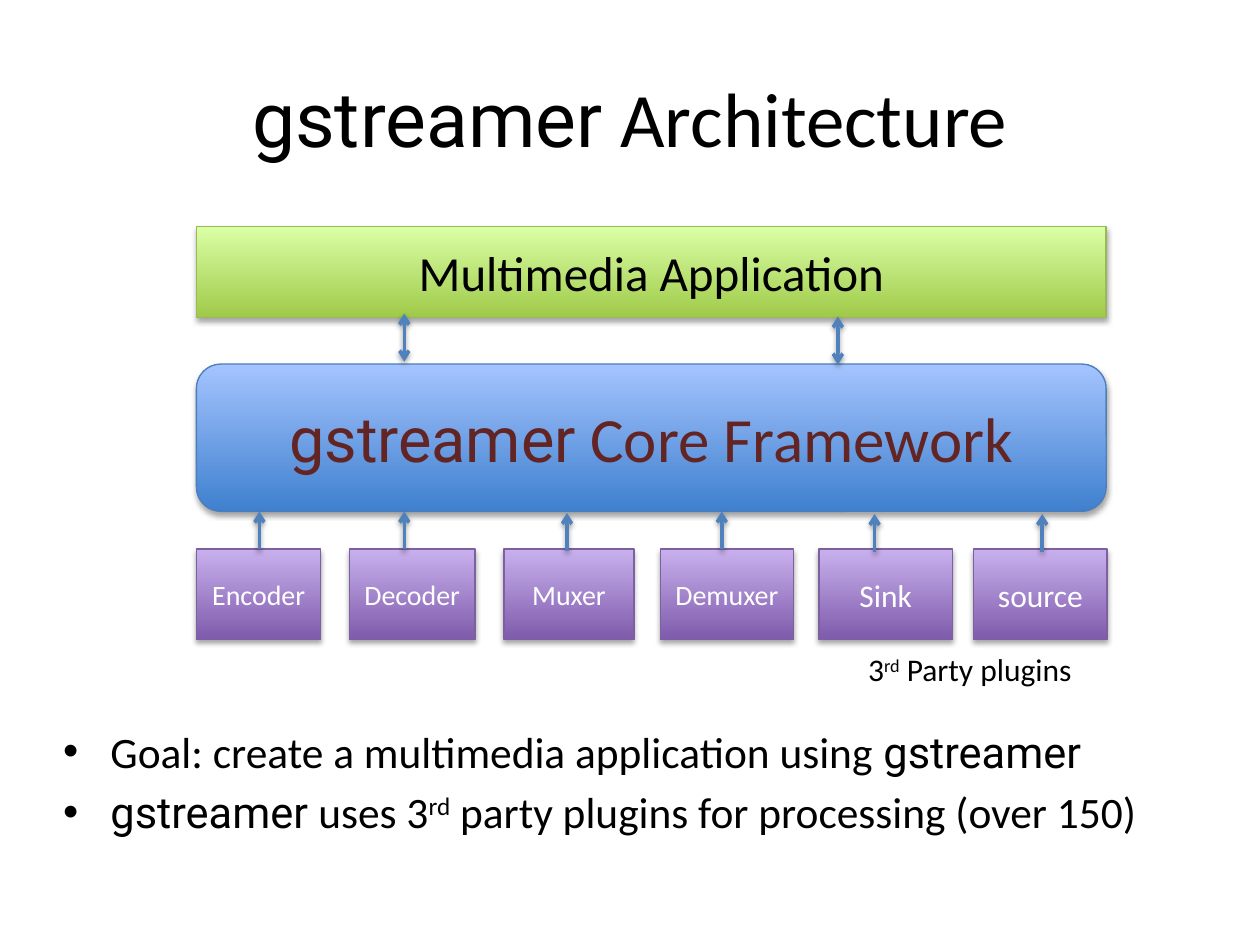
from lxml.etree import SubElement
from pptx import Presentation
from pptx.dml.color import RGBColor
from pptx.enum.shapes import MSO_CONNECTOR as Connector, MSO_SHAPE as Shape
from pptx.enum.text import MSO_ANCHOR as Anchor, MSO_AUTO_SIZE as AutoSize, PP_ALIGN as Align
from pptx.oxml.ns import qn
from pptx.util import Cm, Pt

COLORS = {
    "text": "000000", "framework_text": "632523", "plugin_text": "FFFFFF", "arrow": "4F81BD",
    "application": ("A0CA4A", "DAFFA5", "98B955"),
    "framework": ("3F80CE", "A4C4FF", "4B7EBC"),
    "plugin": ("7F5BAB", "C8B0ED", "7D60A0"),
}
LIBRARY = ("gstreamer", "library")
TITLE = [LIBRARY, (" Architecture", "")]
GOALS = [
    [("Goal: create a multimedia application using ", ""), LIBRARY],
    [LIBRARY, (" uses 3", ""), ("rd", "super"), (" party plugins for processing (over 150)", "")],
]
APPLICATION = [("Multimedia Application", "")]
FRAMEWORK = [LIBRARY, (" Core Framework", "")]
CAPTION = [("3", ""), ("rd", "super"), (" Party plugins", "")]
PLUGINS = [
    ("Encoder", 16, 3.96, 2.51, 5.23, 0),
    ("Decoder", 16, 7.04, 2.54, 8.15, 0),
    ("Muxer", 16, 10.16, 2.62, 11.43, 0.03),
    ("Demuxer", 16, 13.31, 2.69, 14.55, 0),
    ("Sink", 18, 16.51, 2.69, 17.63, 0.05),
    ("source", 18, 19.63, 2.69, 21.01, 0.05),
]
APPLICATION_LINKS = [(16.89, 6.38), (8.15, 6.32)]
STACK_LEFT, STACK_WIDTH = 3.96, 18.34
APPLICATION_TOP, FRAMEWORK_TOP, PLUGIN_TOP = 4.57, 7.34, 11.07
BAR_HEIGHT, FRAMEWORK_HEIGHT = 1.83, 2.97
LINK_HEIGHT, PLUGIN_LINK_HEIGHT = 0.97, 0.76


def write(paragraph, parts, size, color="text"):
    for words, style in parts:
        run = paragraph.add_run()
        run.text = words
        run.font.name = "Roboto" if style == "library" else "Calibri"
        if style == "super":
            run._r.get_or_add_rPr().set("baseline", "30000")
    paragraph.font.size = Pt(size)
    paragraph.font.color.rgb = RGBColor.from_string(COLORS[color])


def add_shadow(effects, distance, opacity):
    shadow = SubElement(effects, qn("a:outerShdw"), blurRad=str(Pt(3.1)), dist=str(Pt(distance)),
                        dir="5400000", rotWithShape="0")
    black = SubElement(shadow, qn("a:srgbClr"), val="000000")
    SubElement(black, qn("a:alpha"), val=str(opacity * 1000))


def add_block(slide, preset, place, palette, parts, size, color):
    block = slide.shapes.add_shape(preset, *map(Cm, place))
    bottom, top, edge = map(RGBColor.from_string, COLORS[palette])
    block.fill.gradient()
    block.fill.gradient_angle = 90
    for stop, shade in zip(block.fill.gradient_stops, (bottom, top)):
        stop.color.rgb = shade
    block.line.color.rgb = edge
    block.line.width = Pt(0.75)
    block.shadow.inherit = False
    add_shadow(block._element.spPr.find(qn("a:effectLst")), 1.8, 35)
    block.text_frame.vertical_anchor = Anchor.MIDDLE
    paragraph = block.text_frame.paragraphs[0]
    paragraph.alignment = Align.CENTER
    write(paragraph, parts, size, color)


def add_arrow(slide, x, start, end, ends):
    arrow = slide.shapes.add_connector(Connector.STRAIGHT, Cm(x), Cm(start), Cm(x), Cm(end))
    arrow.line.color.rgb = RGBColor.from_string(COLORS["arrow"])
    arrow.line.width = Pt(2)
    properties = arrow._element.spPr
    for end_tag in ends:
        SubElement(properties.find(qn("a:ln")), qn(end_tag), type="arrow")
    add_shadow(SubElement(properties, qn("a:effectLst")), 1.6, 38)


def main():
    deck = Presentation()
    deck.slide_width, deck.slide_height = Cm(25.4), Cm(19.05)
    slide = deck.slides.add_slide(deck.slide_layouts[1])

    title, goals = slide.placeholders
    title.left, title.top, title.width, title.height = map(Cm, (1.27, 0.76, 22.86, 3.18))
    write(title.text_frame.paragraphs[0], TITLE, 44)

    goals.left, goals.top, goals.width, goals.height = map(Cm, (1.02, 14.48, 23.72, 3.12))
    goals.text_frame.auto_size = AutoSize.NONE
    for index, goal in enumerate(GOALS):
        frame = goals.text_frame
        paragraph = frame.add_paragraph() if index else frame.paragraphs[0]
        write(paragraph, goal, 24.8)

    add_block(slide, Shape.ROUNDED_RECTANGLE,
              (STACK_LEFT, FRAMEWORK_TOP, STACK_WIDTH, FRAMEWORK_HEIGHT),
              "framework", FRAMEWORK, 36, "framework_text")
    add_block(slide, Shape.RECTANGLE, (STACK_LEFT, APPLICATION_TOP, STACK_WIDTH, BAR_HEIGHT),
              "application", APPLICATION, 28, "text")
    for name, size, left, width, _, _ in PLUGINS:
        add_block(slide, Shape.RECTANGLE, (left, PLUGIN_TOP, width, BAR_HEIGHT),
                  "plugin", [(name, "")], size, "plugin_text")

    for x, top in APPLICATION_LINKS:
        add_arrow(slide, x, top, top + LINK_HEIGHT, ("a:headEnd", "a:tailEnd"))
    for _, _, _, _, x, drop in PLUGINS:
        start = PLUGIN_TOP + drop
        add_arrow(slide, x, start, start - PLUGIN_LINK_HEIGHT, ("a:tailEnd",))

    caption = slide.shapes.add_textbox(*map(Cm, (17.25, 12.98, 4.72, 1.02)))
    caption.text_frame.word_wrap = False
    caption.text_frame.auto_size = AutoSize.SHAPE_TO_FIT_TEXT
    write(caption.text_frame.paragraphs[0], CAPTION, 18)

    deck.save("out.pptx")


if __name__ == "__main__":
    main()
